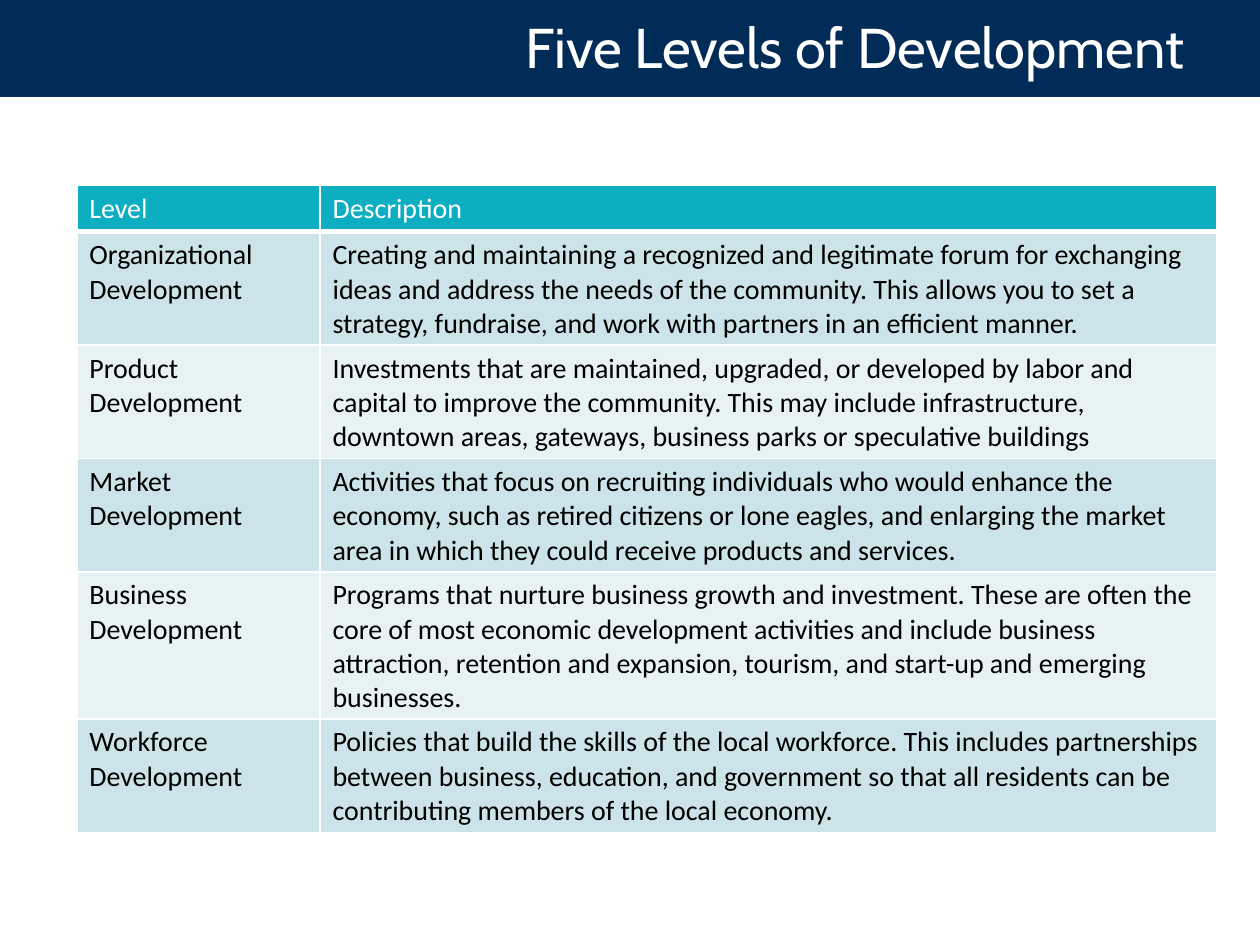
from lxml import etree
from pptx import Presentation
from pptx.dml.color import RGBColor
from pptx.enum.shapes import MSO_SHAPE
from pptx.enum.text import MSO_ANCHOR, PP_ALIGN
from pptx.oxml.ns import qn
from pptx.util import Inches, Pt

RECTANGLE = MSO_SHAPE.RECTANGLE
TOP = MSO_ANCHOR.TOP
RIGHT = PP_ALIGN.RIGHT

WHITE = RGBColor(0xFF, 0xFF, 0xFF)
BLACK = RGBColor(0x00, 0x00, 0x00)
NAVY = RGBColor(0x00, 0x2C, 0x57)
TEAL = RGBColor(0x0D, 0xAE, 0xC1)
BANDS = (RGBColor(0xE7, 0xF2, 0xF4), RGBColor(0xCC, 0xE3, 0xE9))

WIDTH, HEIGHT = Inches(10), Inches(7.5)
BANNER_HEIGHT = Inches(0.77)
HEADER_ROW, BODY_ROW = Inches(0.37), Inches(0.64)
LEVEL_COLUMN = Inches(1.93)

TITLE_FORMAT = {"name": "Cabin", "size": Pt(32), "bold": False}
CELL_FORMAT = {"name": "Calibri", "size": Pt(16), "bold": False}

LEVELS = [
    ("Level", "Description"),
    ("Organizational Development",
     "Creating and maintaining a recognized and legitimate forum for exchanging ideas and "
     "address the needs of the community. This allows you to set a strategy, fundraise, and "
     "work with partners in an efficient manner."),
    ("Product Development",
     "Investments that are maintained, upgraded, or developed by labor and capital to improve "
     "the community. This may include infrastructure, downtown areas, gateways, business parks "
     "or speculative buildings"),
    ("Market Development",
     "Activities that focus on recruiting individuals who would enhance the economy, such as "
     "retired citizens or lone eagles, and enlarging the market area in which they could "
     "receive products and services."),
    ("Business Development",
     "Programs that nurture business growth and investment. These are often the core of most "
     "economic development activities and include business attraction, retention and "
     "expansion, tourism, and start-up and emerging businesses."),
    ("Workforce Development",
     "Policies that build the skills of the local workforce. This includes partnerships "
     "between business, education, and government so that all residents can be contributing "
     "members of the local economy."),
]


def write(paragraph, text, formats, color):
    paragraph.text = text
    font = paragraph.runs[0].font
    for name, value in formats.items():
        setattr(font, name, value)
    font.color.rgb = color


def add_banner(slide, left, top, width, height):
    banner = slide.shapes.add_shape(RECTANGLE, left, top, width, height)
    banner.shadow.inherit = False
    banner.fill.solid()
    banner.fill.fore_color.rgb = NAVY
    banner.line.fill.background()

    margin = int(width * 0.05)
    inset = Inches(0.05)
    title = slide.shapes.add_textbox(left + margin, top + inset,
                                     width - 2 * margin, height - inset)
    frame = title.text_frame
    frame.word_wrap = True
    frame.vertical_anchor = TOP
    paragraph = frame.paragraphs[0]
    paragraph.alignment = RIGHT
    write(paragraph, "Five Levels of Development", TITLE_FORMAT, WHITE)


def add_borders(cell, widths):
    properties = cell._tc.get_or_add_tcPr()
    for side, width in widths.items():
        line = etree.SubElement(properties, qn(f"a:ln{side}"), w=str(Pt(width)))
        fill = etree.SubElement(line, qn("a:solidFill"))
        etree.SubElement(fill, qn("a:srgbClr"), val=str(WHITE))


def add_levels_table(slide, left, top, width):
    height = HEADER_ROW + BODY_ROW * (len(LEVELS) - 1)
    table = slide.shapes.add_table(len(LEVELS), 2, left, top, width, height).table
    table.columns[0].width = LEVEL_COLUMN
    table.columns[1].width = width - LEVEL_COLUMN
    for row_index, texts in enumerate(LEVELS):
        is_header = row_index == 0
        table.rows[row_index].height = HEADER_ROW if is_header else BODY_ROW
        for column_index, text in enumerate(texts):
            cell = table.cell(row_index, column_index)
            add_borders(cell, {"L": 1, "R": 1, "T": 1, "B": 3 if is_header else 1})
            cell.fill.solid()
            cell.fill.fore_color.rgb = TEAL if is_header else BANDS[row_index % 2]
            write(cell.text_frame.paragraphs[0], text, CELL_FORMAT,
                  WHITE if is_header else BLACK)


def main():
    presentation = Presentation()
    presentation.slide_width, presentation.slide_height = WIDTH, HEIGHT
    slide = presentation.slides.add_slide(presentation.slide_layouts[6])
    add_banner(slide, 0, 0, WIDTH, BANNER_HEIGHT)
    add_levels_table(slide, Inches(0.61), Inches(1.47), Inches(9.05))
    presentation.save("out.pptx")


if __name__ == "__main__":
    main()
